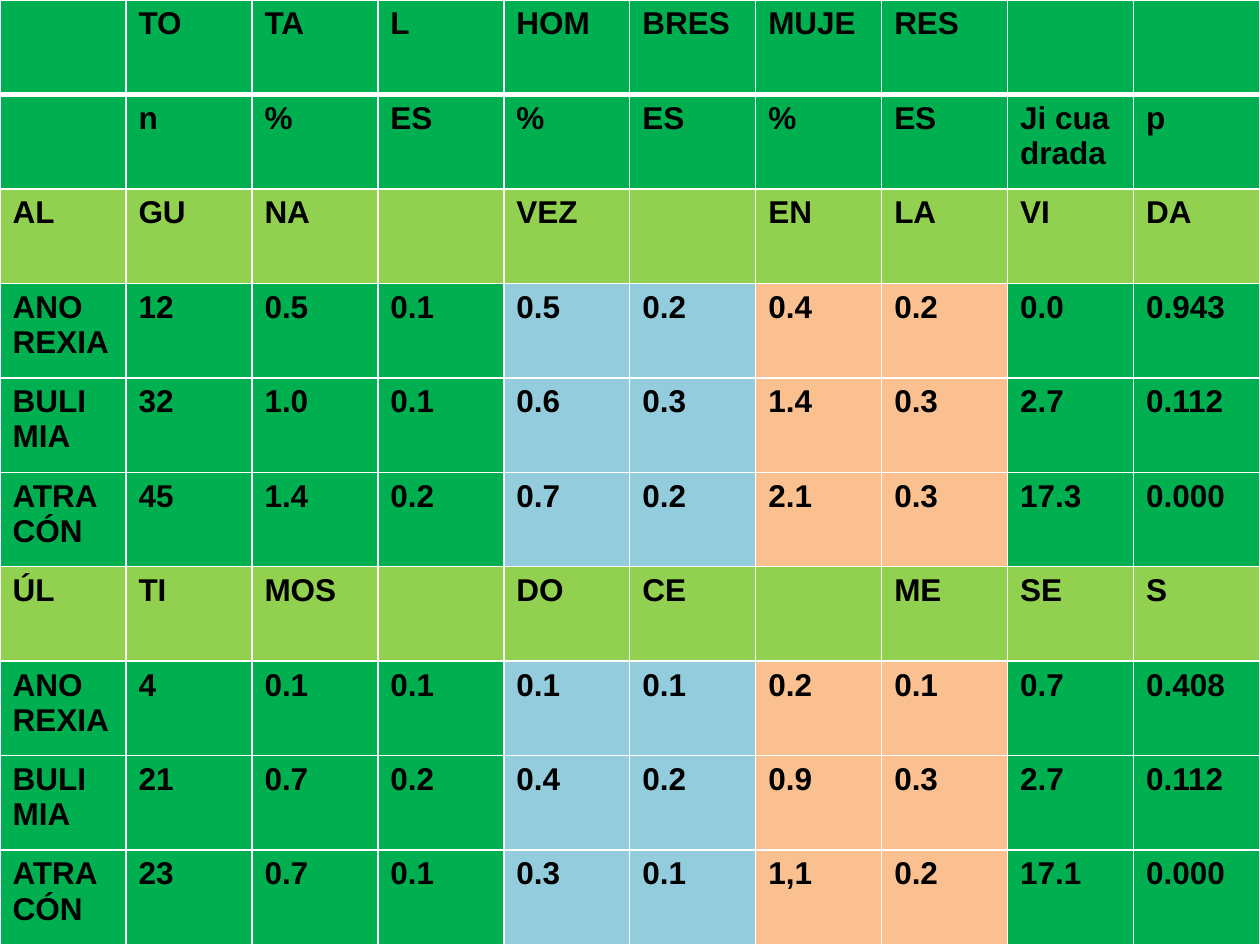
from lxml import etree
from pptx import Presentation, util as u
from pptx.dml.color import RGBColor
from pptx.oxml.ns import qn

PX = u.Inches(1) // 126
W, H = 1260, 945
COLORS = {"base": "00B050", "band": "92D050", "men": "93CDDD",
          "women": "FAC090", "rule": "FFFFFF", "text": "000000"}
HEADER_ROWS = 2
BAND_ROWS = (2, 6)
GROUP_COLUMNS = {4: "men", 5: "men", 6: "women", 7: "women"}
ROWS = [row.split("|") for row in (
    "|TO|TA|L|HOM|BRES|MUJE|RES||",
    "|n|%|ES|%|ES|%|ES|Ji cua drada|p",
    "AL|GU|NA||VEZ||EN|LA|VI|DA",
    "ANO REXIA|12|0.5|0.1|0.5|0.2|0.4|0.2|0.0|0.943",
    "BULI MIA|32|1.0|0.1|0.6|0.3|1.4|0.3|2.7|0.112",
    "ATRA CÓN|45|1.4|0.2|0.7|0.2|2.1|0.3|17.3|0.000",
    "ÚL|TI|MOS||DO|CE||ME|SE|S",
    "ANO\nREXIA|4|0.1|0.1|0.1|0.1|0.2|0.1|0.7|0.408",
    "BULI MIA|21|0.7|0.2|0.4|0.2|0.9|0.3|2.7|0.112",
    "ATRA CÓN|23|0.7|0.1|0.3|0.1|1,1|0.2|17.1|0.000",
)]


def rgb(name):
    return RGBColor.from_string(COLORS[name])


def fill_name(row, col):
    if row in BAND_ROWS:
        return "band"
    if row < HEADER_ROWS:
        return "base"
    return GROUP_COLUMNS.get(col, "base")


def set_borders(cell, row):
    """Draw thin rules, with a thick one between the first two rows."""
    widths = {"L": 1, "R": 1, "T": 3 if row == 1 else 1, "B": 3 if row == 0 else 1}
    tcPr = cell._tc.get_or_add_tcPr()
    for side, width in widths.items():
        ln = etree.SubElement(tcPr, qn(f"a:ln{side}"), w=str(u.Pt(width)))
        fill = etree.SubElement(ln, qn("a:solidFill"))
        etree.SubElement(fill, qn("a:srgbClr"), val=COLORS["rule"])


def add_cell_text(cell, value):
    tf = cell.text_frame
    for i, line in enumerate(value.split("\n")):
        p = tf.add_paragraph() if i else tf.paragraphs[0]
        p.font.size = u.Pt(18)
        if line:
            r = p.add_run()
            r.text = line
            r.font.name, r.font.size, r.font.bold = "Arial", u.Pt(18), True
            r.font.color.rgb = rgb("text")


def prevalence_table(s, x, y, w, h):
    n_rows, n_cols = len(ROWS), len(ROWS[0])
    table = s.shapes.add_table(n_rows, n_cols, x * PX, y * PX, w * PX, h * PX).table
    table.horz_banding = False
    for col in table.columns:
        col.width = w * PX // n_cols
    for i, values in enumerate(ROWS):
        table.rows[i].height = h * PX // n_rows
        for j, value in enumerate(values):
            cell = table.cell(i, j)
            set_borders(cell, i)
            cell.fill.solid()
            cell.fill.fore_color.rgb = rgb(fill_name(i, j))
            add_cell_text(cell, value)


def main():
    prs = Presentation()
    prs.slide_width, prs.slide_height = W * PX, H * PX
    s = prs.slides.add_slide(prs.slide_layouts[6])
    prevalence_table(s, 0, 0, W, H)
    prs.save("out.pptx")


if __name__ == "__main__":
    main()
